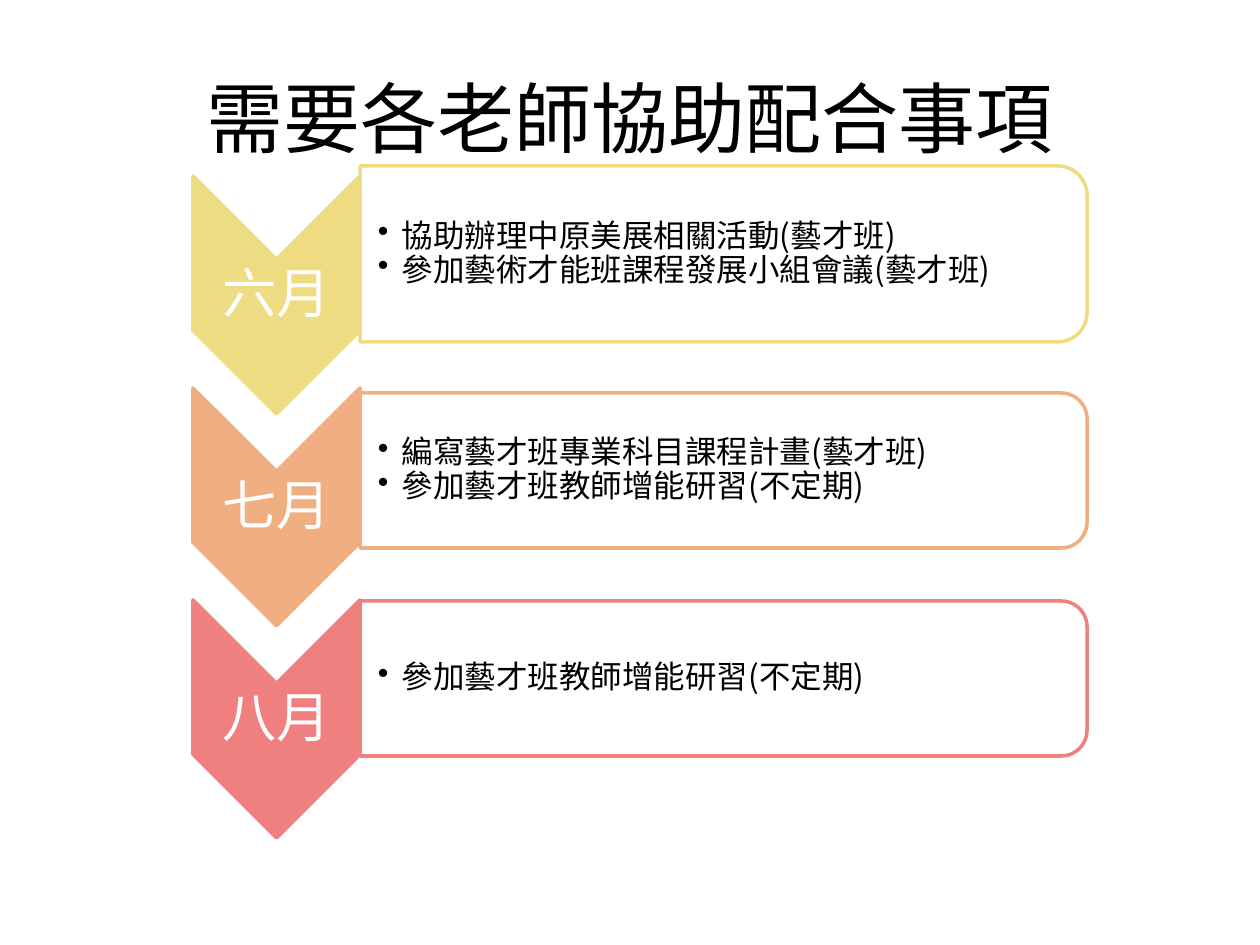
from lxml import etree
from pptx import Presentation
from pptx.dml.color import RGBColor
from pptx.enum.shapes import MSO_SHAPE
from pptx.enum.text import MSO_ANCHOR, PP_ALIGN
from pptx.oxml.ns import qn
from pptx.util import Emu, Pt

CHEVRON = MSO_SHAPE.CHEVRON
ROUNDED_END = MSO_SHAPE.ROUND_2_SAME_RECTANGLE
MIDDLE = MSO_ANCHOR.MIDDLE
LEFT, CENTER = PP_ALIGN.LEFT, PP_ALIGN.CENTER

BLACK = RGBColor(0x00, 0x00, 0x00)
WHITE = RGBColor(0xFF, 0xFF, 0xFF)
YELLOW = RGBColor(0xEE, 0xDC, 0x82)
ORANGE = RGBColor(0xEF, 0xAF, 0x81)
CORAL = RGBColor(0xF0, 0x80, 0x80)

CJK_FONT = "Noto Sans CJK SC"
MONTH_FONT = "Calibri"
PX_PER_INCH = 126

MONTH_LEFT, MONTH_TOP, MONTH_STEP = 193, 176, 212
MONTH_WIDTH, MONTH_HEIGHT = 167, 238
PANEL_LEFT, PANEL_WIDTH, PANEL_MARGIN = 360, 727, 8

# month, colour, panel top, panel height, tasks
MONTHS = [
    ("六月", YELLOW, 166, 176,
     ["協助辦理中原美展相關活動(藝才班)", "參加藝術才能班課程發展小組會議(藝才班)"]),
    ("七月", ORANGE, 393, 155,
     ["編寫藝才班專業科目課程計畫(藝才班)", "參加藝才班教師增能研習(不定期)"]),
    ("八月", CORAL, 601, 155,
     ["參加藝才班教師增能研習(不定期)"]),
]


def px(length):
    return Emu(round(length * 914400 / PX_PER_INCH))


class SlideBuilder:
    def __init__(self, slide):
        self.slide = slide

    def turned_shape(self, preset, left, top, width, height, fill, line, opacity=100):
        """Add a shape turned by 90 degrees; the box given is the one seen after turning."""
        shift = (width - height) / 2
        shape = self.slide.shapes.add_shape(
            preset, px(left + shift), px(top - shift), px(height), px(width))
        shape.rotation = 90
        shape.shadow.inherit = False
        shape.fill.solid()
        shape.fill.fore_color.rgb = fill
        shape.line.color.rgb = line
        shape.line.width = Pt(2)
        etree.SubElement(shape.line._get_or_add_ln(), qn("a:round"))
        if opacity < 100:
            color = shape.fill._xPr.find(qn("a:solidFill"))[0]
            etree.SubElement(color, qn("a:alpha"), val=str(opacity * 1000))

    def text(self, box, lines, size, font, color, align=CENTER,
             insets=(2, 2, 2, 2), spacing=0.9, bullets=False):
        frame = self.slide.shapes.add_textbox(*map(px, box)).text_frame
        frame.word_wrap = True
        frame.vertical_anchor = MIDDLE
        (frame.margin_left, frame.margin_top,
         frame.margin_right, frame.margin_bottom) = map(px, insets)
        for index, line in enumerate(lines):
            paragraph = frame.paragraphs[0] if index == 0 else frame.add_paragraph()
            paragraph.alignment = align
            paragraph.line_spacing = spacing
            if bullets:
                self.bullet(paragraph)
            run = paragraph.add_run()
            run.text = line
            paragraph.font.size = Pt(size)
            paragraph.font.name = font
            paragraph.font.color.rgb = color
            etree.SubElement(run._r.get_or_add_rPr(), qn("a:ea"), typeface=CJK_FONT)

    def bullet(self, paragraph):
        properties = paragraph._p.get_or_add_pPr()
        indent = px(24)
        properties.set("marL", str(indent))
        properties.set("indent", str(-indent))
        etree.SubElement(properties, qn("a:buChar"), char="•")

    def month(self, row, name, color):
        top = MONTH_TOP + row * MONTH_STEP
        self.turned_shape(CHEVRON, MONTH_LEFT, top, MONTH_WIDTH, MONTH_HEIGHT, color, color)
        label_box = (MONTH_LEFT, top + 84, MONTH_WIDTH, 72)
        self.text(label_box, [name], 31, MONTH_FONT, WHITE)

    def task_panel(self, top, height, color, tasks):
        self.turned_shape(ROUNDED_END, PANEL_LEFT, top, PANEL_WIDTH, height,
                          WHITE, color, opacity=90)
        task_box = (PANEL_LEFT, top + PANEL_MARGIN,
                    PANEL_WIDTH - PANEL_MARGIN, height - 2 * PANEL_MARGIN)
        self.text(task_box, tasks, 18, CJK_FONT, BLACK, align=LEFT,
                  insets=(18, 1, 1, 1), bullets=True)


def main():
    presentation = Presentation()
    presentation.slide_width, presentation.slide_height = px(1260), px(945)
    builder = SlideBuilder(presentation.slides.add_slide(presentation.slide_layouts[6]))

    builder.text((63, 38, 1134, 158), ["需要各老師協助配合事項"], 44, CJK_FONT, BLACK,
                 insets=(13, 6, 13, 6), spacing=1.0)
    for row, (name, color, top, height, tasks) in enumerate(MONTHS):
        builder.month(row, name, color)
        builder.task_panel(top, height, color, tasks)

    presentation.save("out.pptx")


if __name__ == "__main__":
    main()
